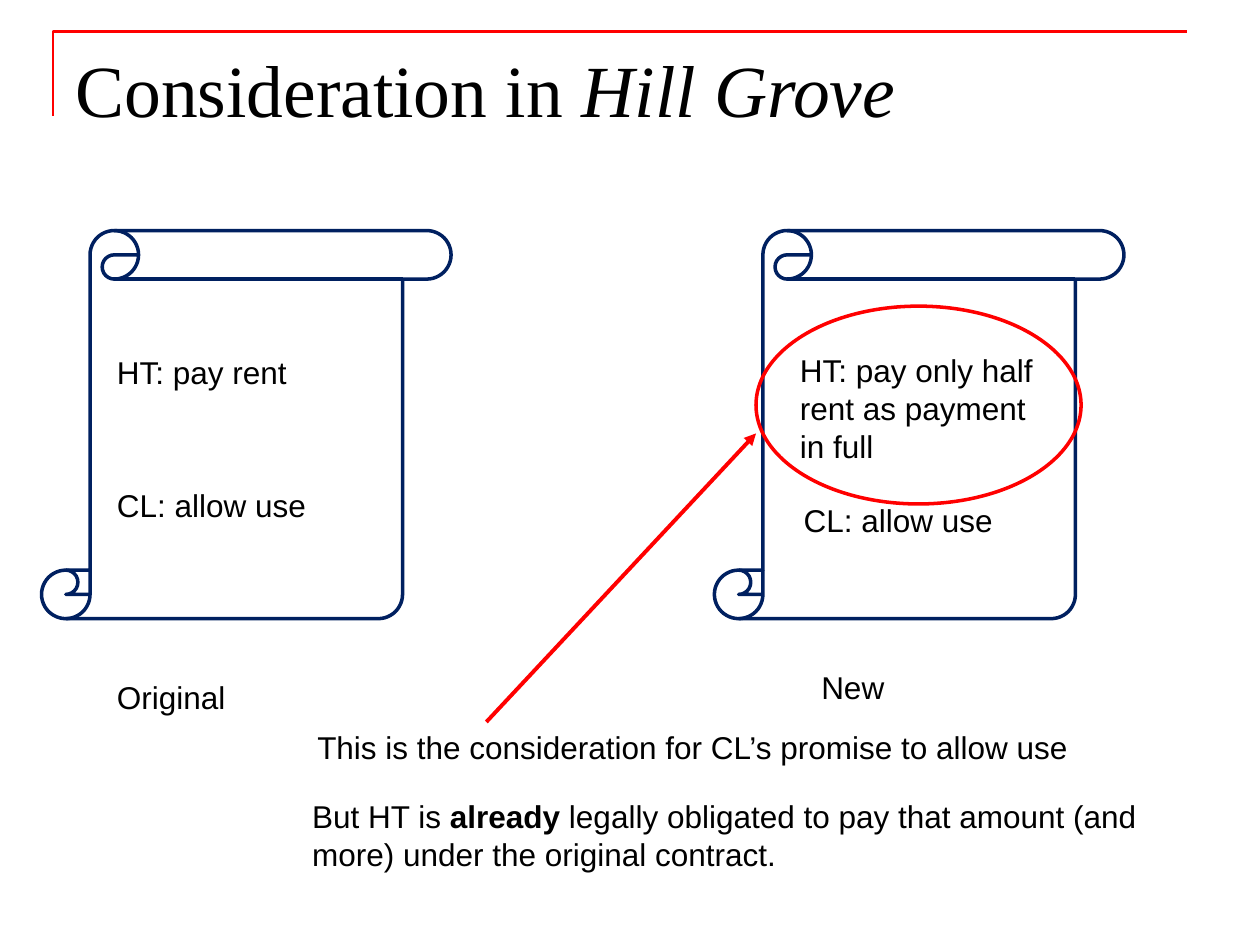
from lxml import etree
from pptx import Presentation
from pptx.dml.color import RGBColor
from pptx.enum.shapes import MSO_CONNECTOR, MSO_SHAPE
from pptx.enum.text import MSO_ANCHOR
from pptx.oxml.ns import qn
from pptx.util import Emu, Pt

SCROLL = MSO_SHAPE.VERTICAL_SCROLL
ELLIPSE = MSO_SHAPE.OVAL
STRAIGHT = MSO_CONNECTOR.STRAIGHT
TOP = MSO_ANCHOR.TOP

RED, NAVY, BLACK = "FF0000", "002060", "000000"
EMU_PER_PX = 9144  # 100 px to the inch


def px(length):
    return Emu(length * EMU_PER_PX)


def color(hex_string):
    return RGBColor.from_string(hex_string)


def set_line(outlined, hex_string, width):
    outlined.line.color.rgb = color(hex_string)
    outlined.line.width = Pt(width)


def add_text(slide, box, runs, size=18, font="Arial"):
    """Place one paragraph; runs are (text, bold, italic)."""
    label = slide.shapes.add_textbox(*map(px, box))
    frame = label.text_frame
    frame.word_wrap = True
    frame.vertical_anchor = TOP
    for text, bold, italic in runs:
        run = frame.paragraphs[0].add_run()
        run.text = text
        run.font.name = font
        run.font.size = Pt(size)
        run.font.bold = bold
        run.font.italic = italic
        run.font.color.rgb = color(BLACK)


def plain(text):
    return [(text, False, False)]


def add_outline(slide, kind, box, hex_string):
    outline = slide.shapes.add_shape(kind, *map(px, box))
    outline.shadow.inherit = False
    outline.fill.background()
    set_line(outline, hex_string, 2)


def add_header(slide, left, top, width):
    # Corner rule
    builder = slide.shapes.build_freeform(left, top + 67, scale=EMU_PER_PX)
    builder.add_line_segments([(left, top), (left + width, top)], close=False)
    corner = builder.convert_to_shape()
    corner.shadow.inherit = False
    corner.fill.background()
    set_line(corner, RED, 1.5)
    # Title
    add_text(slide, (left + 8, top + 5, width, 125),
             [("Consideration in ", False, False), ("Hill Grove", False, True)],
             size=42, font="Times New Roman")


def add_contract(slide, left, top, terms):
    """Draw a scroll with its terms, each as (text, dx, dy, width, height)."""
    add_outline(slide, SCROLL, (left, top, 325, 308), NAVY)
    for text, dx, dy, width, height in terms:
        add_text(slide, (left + dx, top + dy, width, height), plain(text))


def add_consideration(slide, left, top):
    """Ring the new promise and point to it from the explanation."""
    add_outline(slide, ELLIPSE, (left, top, 258, 157), RED)
    arrow = slide.shapes.add_connector(
        STRAIGHT, px(left - 214), px(top + 330), px(left), px(top + 101))
    set_line(arrow, RED, 2.25)
    etree.SubElement(arrow.line._get_or_add_ln(), qn("a:tailEnd"), type="triangle")
    etree.SubElement(arrow._element.spPr, qn("a:effectLst"))


def add_explanation(slide, left, top):
    add_text(slide, (left + 4, top, 717, 40),
             plain("This is the consideration for CL’s promise to allow use"))
    add_text(slide, (left, top + 55, 717, 71), [
        ("But HT is ", False, False),
        ("already", True, False),
        (" legally obligated to pay that amount (and more)"
         " under the original contract.", False, False),
    ])


def main():
    deck = Presentation()
    deck.slide_width, deck.slide_height = px(1000), px(750)
    slide = deck.slides.add_slide(deck.slide_layouts[6])

    add_header(slide, 42, 25, 900)
    add_contract(slide, 33, 183, [
        ("HT: pay rent", 50, 92, 158, 40),
        ("CL: allow use", 50, 198, 175, 40),
        ("Original", 50, 350, 250, 40),
    ])
    add_contract(slide, 567, 183, [
        ("HT: pay only half rent as payment in full", 58, 91, 208, 101),
        ("CL: allow use", 61, 210, 175, 40),
        ("New", 75, 342, 250, 40),
    ])
    add_consideration(slide, 600, 243)
    add_explanation(slide, 238, 573)

    deck.save("out.pptx")


if __name__ == "__main__":
    main()
